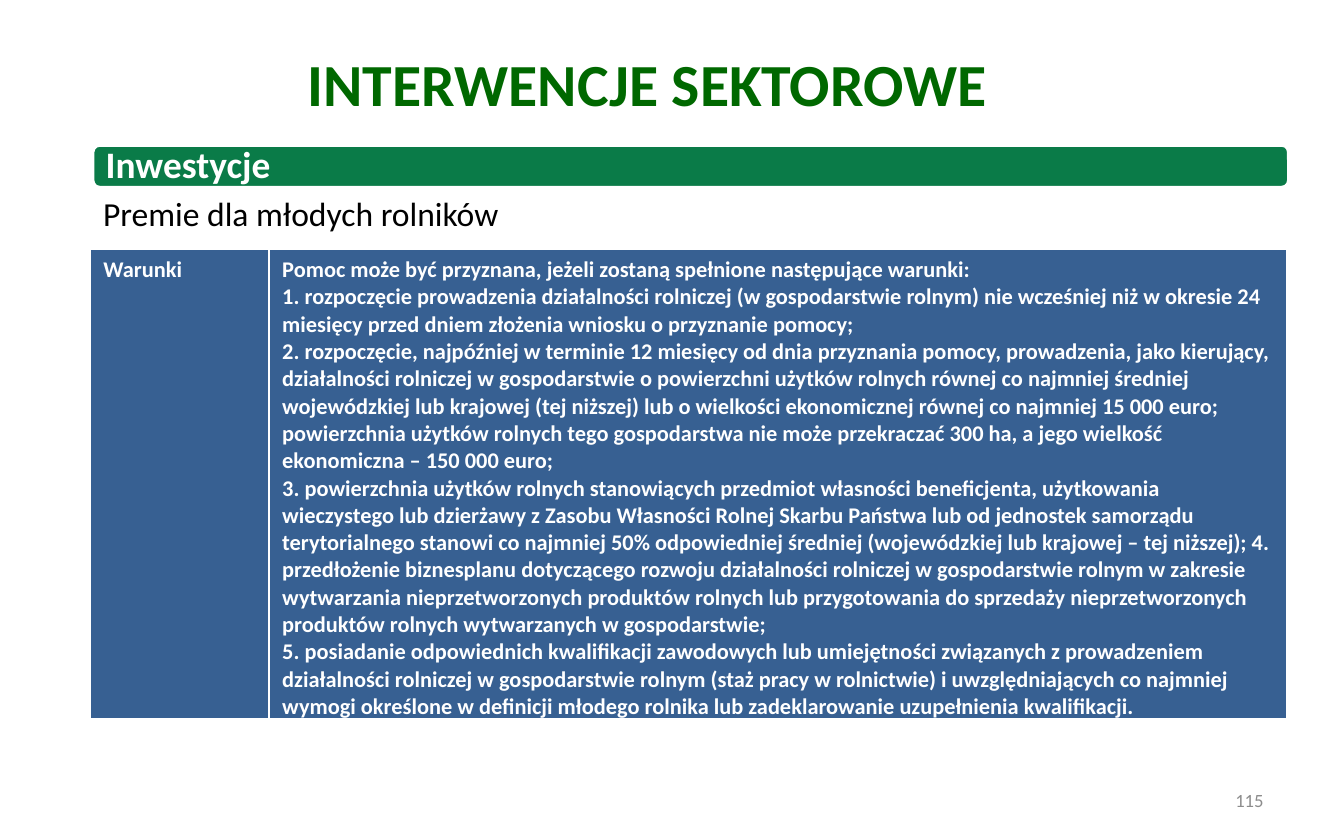
from lxml.etree import SubElement
from pptx import Presentation
from pptx.dml.color import RGBColor
from pptx.enum.shapes import MSO_SHAPE
from pptx.enum.text import MSO_ANCHOR, MSO_AUTO_SIZE, PP_ALIGN
from pptx.oxml.ns import qn
from pptx.util import Cm, Pt

COLOURS = {
    "title": "006800",
    "banner": "0A7B48",
    "cell": "376092",
    "white": "FFFFFF",
    "black": "000000",
    "number": "8C8C8C",
}

CONDITIONS = [
    "Pomoc może być przyznana, jeżeli zostaną spełnione następujące warunki: ",
    "1. rozpoczęcie prowadzenia działalności rolniczej (w gospodarstwie rolnym) nie wcześniej "
    "niż w okresie 24 miesięcy przed dniem złożenia wniosku o przyznanie pomocy; ",
    "2. rozpoczęcie, najpóźniej w terminie 12 miesięcy od dnia przyznania pomocy, prowadzenia, "
    "jako kierujący, działalności rolniczej w gospodarstwie o powierzchni użytków rolnych równej "
    "co najmniej średniej wojewódzkiej lub krajowej (tej niższej) lub o wielkości ekonomicznej "
    "równej co najmniej 15 000 euro; powierzchnia użytków rolnych tego gospodarstwa nie może "
    "przekraczać 300 ha, a jego wielkość ekonomiczna – 150 000 euro; ",
    "3. powierzchnia użytków rolnych stanowiących przedmiot własności beneficjenta, użytkowania "
    "wieczystego lub dzierżawy z Zasobu Własności Rolnej Skarbu Państwa lub od jednostek "
    "samorządu terytorialnego stanowi co najmniej 50% odpowiedniej średniej (wojewódzkiej lub "
    "krajowej – tej niższej); 4. przedłożenie biznesplanu dotyczącego rozwoju działalności "
    "rolniczej w gospodarstwie rolnym w zakresie wytwarzania nieprzetworzonych produktów rolnych "
    "lub przygotowania do sprzedaży nieprzetworzonych produktów rolnych wytwarzanych "
    "w gospodarstwie; ",
    "5. posiadanie odpowiednich kwalifikacji zawodowych lub umiejętności związanych "
    "z prowadzeniem działalności rolniczej w gospodarstwie rolnym (staż pracy w rolnictwie) "
    "i uwzględniających co najmniej wymogi określone w definicji młodego rolnika lub "
    "zadeklarowanie uzupełnienia kwalifikacji.",
]


def colour(name):
    """Return the named colour."""
    return RGBColor.from_string(COLOURS[name])


def write(frame, text, size, colour_name, bold=False, align=PP_ALIGN.LEFT, anchor=MSO_ANCHOR.TOP):
    """Fill a text frame with one formatted paragraph and return it."""
    frame.text = text
    frame.word_wrap = True
    frame.vertical_anchor = anchor
    para = frame.paragraphs[0]
    para.alignment = align
    for span in para.runs:
        span.font.name = "Calibri"
        span.font.size = Pt(size)
        span.font.bold = bold
        span.font.color.rgb = colour(colour_name)
    return para


def add_title(page, left, top, width, height):
    """Move and format the title placeholder."""
    title = page.shapes.title
    title.left, title.top, title.width, title.height = left, top, width, height
    write(title.text_frame, "INTERWENCJE SEKTOROWE", 32, "title", True, PP_ALIGN.CENTER)
    title.text_frame.auto_size = MSO_AUTO_SIZE.NONE


def add_banner(page, left, top, width, height):
    """Add the green section banner."""
    banner = page.shapes.add_shape(MSO_SHAPE.ROUNDED_RECTANGLE, left, top, width, height)
    banner.shadow.inherit = False
    banner.fill.solid()
    banner.fill.fore_color.rgb = colour("banner")
    banner.line.color.rgb = colour("white")
    banner.line.width = Pt(2)
    frame = banner.text_frame
    para = write(frame, "Inwestycje", 20, "white", True, anchor=MSO_ANCHOR.MIDDLE)
    para.line_spacing = 0.9
    frame.margin_left = frame.margin_right = Cm(0.21)
    frame.margin_top = frame.margin_bottom = 0


def add_label(page, left, top, width, height, *text_format):
    """Add a text box with one formatted line."""
    box = page.shapes.add_textbox(left, top, width, height)
    write(box.text_frame, *text_format)


def add_borders(cell):
    """Draw white borders around a cell, the bottom one thicker."""
    properties = cell._tc.get_or_add_tcPr()
    for position, (side, points) in enumerate({"L": 1, "R": 1, "T": 1, "B": 3}.items()):
        line = SubElement(properties, qn(f"a:ln{side}"), w=str(Pt(points)))
        fill = SubElement(line, qn("a:solidFill"))
        SubElement(fill, qn("a:srgbClr"), val=COLOURS["white"])
        properties.insert(position, line)


def add_conditions(page, left, top, width, height):
    """Add the table of conditions."""
    table = page.shapes.add_table(1, 2, left, top, width, height).table
    label_width = Cm(3.38)
    table.columns[0].width = label_width
    table.columns[1].width = width - label_width
    for cell, text in zip(table.rows[0].cells, ["Warunki", "\v".join(CONDITIONS)]):
        write(cell.text_frame, text, 12, "white", True)
        cell.fill.solid()
        cell.fill.fore_color.rgb = colour("cell")
        add_borders(cell)


def main():
    """Build and save the deck."""
    deck = Presentation()
    deck.slide_width, deck.slide_height = Cm(25.4), Cm(15.88)
    page = deck.slides.add_slide(deck.slide_layouts[5])
    add_title(page, Cm(4.78), Cm(0.76), Cm(14.91), Cm(1.8))
    add_banner(page, Cm(1.75), Cm(2.74), Cm(22.61), Cm(0.81))
    add_label(page, Cm(1.7), Cm(3.53), Cm(22.43), Cm(1.02),
              "Premie dla młodych rolników", 18, "black")
    add_conditions(page, Cm(1.7), Cm(4.72), Cm(22.61), Cm(8.89))
    add_label(page, Cm(18.21), Cm(14.71), Cm(5.92), Cm(0.84),
              "115", 10, "number", False, PP_ALIGN.RIGHT, MSO_ANCHOR.MIDDLE)
    deck.save("out.pptx")


if __name__ == "__main__":
    main()
